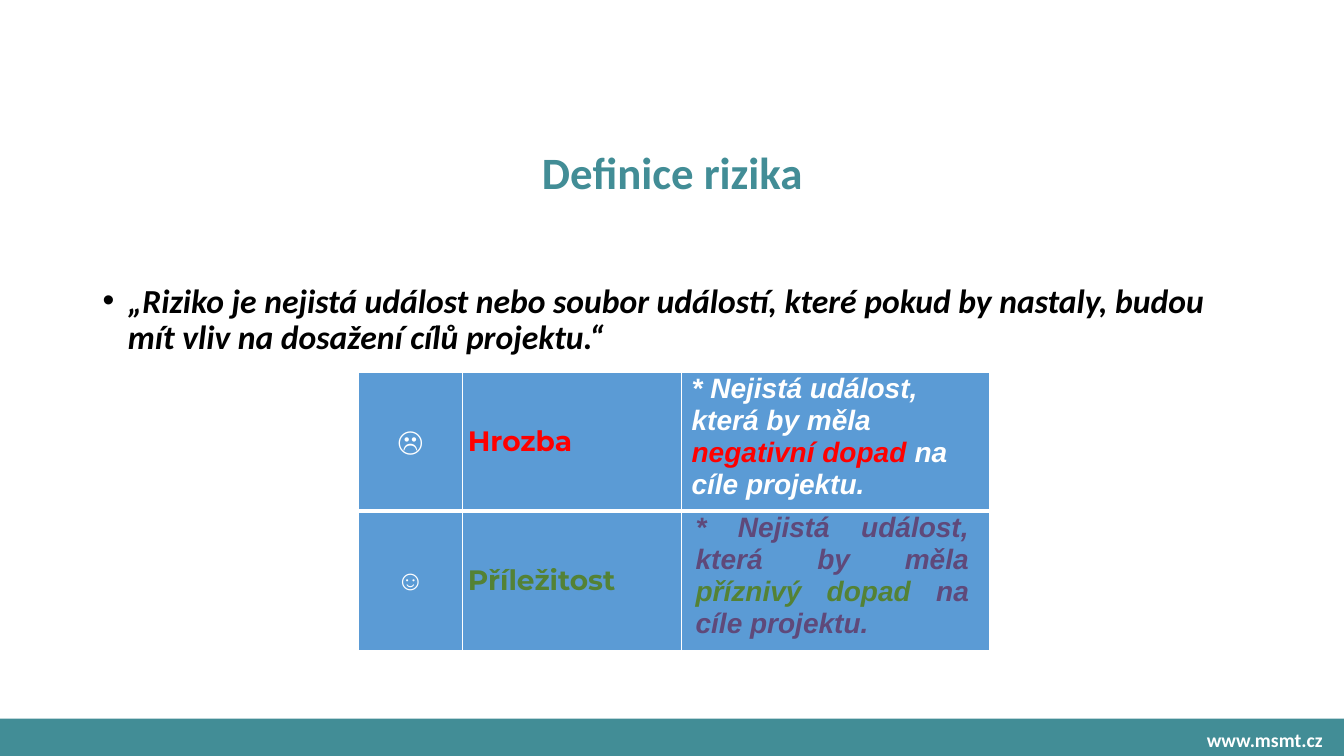
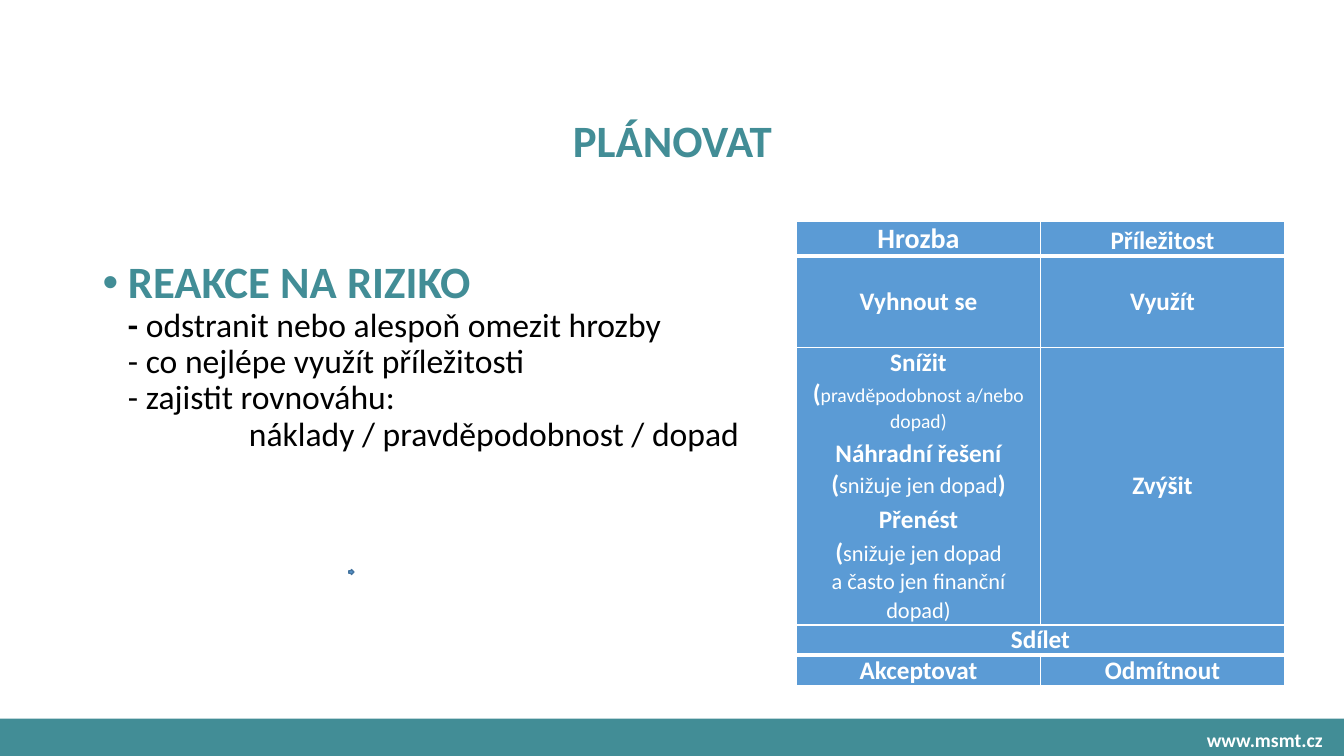
from typing import NamedTuple

from lxml import etree
from pptx import Presentation
from pptx.dml.color import RGBColor
from pptx.enum.shapes import MSO_SHAPE
from pptx.enum.text import MSO_ANCHOR, PP_ALIGN
from pptx.oxml.ns import qn
from pptx.util import Inches, Pt

TEAL = RGBColor(0x42, 0x8D, 0x96)
BLUE = RGBColor(0x5B, 0x9B, 0xD5)
DARK_BLUE = RGBColor(0x43, 0x73, 0x9E)
WHITE = RGBColor(0xFF, 0xFF, 0xFF)
BLACK = RGBColor(0x00, 0x00, 0x00)
RED = RGBColor(0xFF, 0x00, 0x00)
GREEN = RGBColor(0x54, 0x82, 0x35)
PURPLE = RGBColor(0x5F, 0x49, 0x7A)

CALIBRI, ARIAL, MONTSERRAT = "Calibri", "Arial", "Montserrat"
LEFT, CENTER, RIGHT = PP_ALIGN.LEFT, PP_ALIGN.CENTER, PP_ALIGN.RIGHT
JUSTIFY = PP_ALIGN.JUSTIFY
TOP, MIDDLE, BOTTOM = MSO_ANCHOR.TOP, MSO_ANCHOR.MIDDLE, MSO_ANCHOR.BOTTOM
RECTANGLE, RIGHT_ARROW = MSO_SHAPE.RECTANGLE, MSO_SHAPE.RIGHT_ARROW

SLIDE_WIDTH, SLIDE_HEIGHT = 13.33, 7.5
FOOTER_HEIGHT = 0.37
CONTENT_LEFT, CONTENT_WIDTH = 0.92, 11.5
BULLET_INDENT = 0.25
THIN_BORDER, THICK_BORDER = 1, 3


class TextRun(NamedTuple):
    text: str
    size: float = 18
    color: RGBColor = WHITE
    bold: bool = True
    italic: bool = False
    font: str = CALIBRI


class TextLine(NamedTuple):
    """One paragraph; indents are in inches, space before in points."""
    runs: tuple[TextRun, ...]
    align: PP_ALIGN = CENTER
    before: float = 0
    spacing: float = 1.0
    left: float = 0
    right: float = 0
    bullet: bool = False


class CellText(NamedTuple):
    """Content of one table cell; side margins are in inches."""
    lines: tuple[TextLine, ...]
    anchor: MSO_ANCHOR = MIDDLE
    left: float = 0
    right: float = 0


class TableLayout(NamedTuple):
    """Place of a table; rows in thick_after end with a thick border."""
    left: float
    top: float
    columns: tuple[float, ...]
    rows: tuple[float, ...]
    thick_after: tuple[int, ...]


def add_run(paragraph, text: str, *, size: float, color: RGBColor,
            bold: bool, italic: bool, font: str) -> None:
    run = paragraph.add_run()
    run.text = text
    run.font.size = Pt(size)
    run.font.color.rgb = color
    run.font.bold = bold
    run.font.italic = italic
    run.font.name = font


def write_lines(frame, lines: tuple[TextLine, ...]) -> None:
    frame.word_wrap = True
    for index, line in enumerate(lines):
        paragraph = frame.add_paragraph() if index else frame.paragraphs[0]
        paragraph.alignment = line.align
        paragraph.line_spacing = line.spacing
        paragraph.space_before = Pt(line.before)
        properties = paragraph._p.get_or_add_pPr()
        properties.set("marL", str(Inches(line.left)))
        properties.set("marR", str(Inches(line.right)))
        if line.bullet:
            properties.set("indent", str(-Inches(BULLET_INDENT)))
            etree.SubElement(properties, qn("a:buFont"), typeface=ARIAL)
            etree.SubElement(properties, qn("a:buChar"), char="•")
        for run in line.runs:
            add_run(paragraph, **run._asdict())


def add_text(slide, lines: tuple[TextLine, ...], left: float, top: float,
             width: float, height: float, anchor: MSO_ANCHOR = TOP) -> None:
    box = slide.shapes.add_textbox(
        Inches(left), Inches(top), Inches(width), Inches(height))
    box.text_frame.vertical_anchor = anchor
    write_lines(box.text_frame, lines)


def add_shape(slide, kind: MSO_SHAPE, fill: RGBColor, left: float, top: float,
              width: float, height: float):
    shape = slide.shapes.add_shape(
        kind, Inches(left), Inches(top), Inches(width), Inches(height))
    shape.shadow.inherit = False
    shape.fill.solid()
    shape.fill.fore_color.rgb = fill
    shape.line.fill.background()
    return shape


def set_borders(cell, top: float, bottom: float) -> None:
    properties = cell._tc.get_or_add_tcPr()
    widths = {"lnL": THIN_BORDER, "lnR": THIN_BORDER, "lnT": top, "lnB": bottom}
    for tag, width in widths.items():
        border = etree.SubElement(properties, qn(f"a:{tag}"), w=str(Pt(width)))
        fill = etree.SubElement(border, qn("a:solidFill"))
        etree.SubElement(fill, qn("a:srgbClr"), val=str(WHITE))


def add_table(slide, layout: TableLayout,
              content: tuple[tuple[CellText, ...], ...]) -> None:
    """Draw the table; a row with a single cell spans all columns."""
    table = slide.shapes.add_table(
        len(layout.rows), len(layout.columns),
        Inches(layout.left), Inches(layout.top),
        Inches(sum(layout.columns)), Inches(sum(layout.rows))).table
    for column, width in zip(table.columns, layout.columns):
        column.width = Inches(width)
    for row, height in zip(table.rows, layout.rows):
        row.height = Inches(height)

    def border_after(row_index: int) -> int:
        return THICK_BORDER if row_index in layout.thick_after else THIN_BORDER

    last_column = len(layout.columns) - 1
    for row_index, row_content in enumerate(content):
        if len(row_content) == 1:
            table.cell(row_index, 0).merge(table.cell(row_index, last_column))
        for cell in table.rows[row_index].cells:
            set_borders(cell, border_after(row_index - 1), border_after(row_index))
            cell.fill.solid()
            cell.fill.fore_color.rgb = BLUE
        for column_index, text in enumerate(row_content):
            cell = table.cell(row_index, column_index)
            cell.margin_top = cell.margin_bottom = 0
            cell.margin_left = Inches(text.left)
            cell.margin_right = Inches(text.right)
            cell.vertical_anchor = text.anchor
            write_lines(cell.text_frame, text.lines)


def add_base_slide(presentation, title: str, title_top: float,
                   title_height: float):
    """Add a blank slide with the footer band and the title."""
    slide = presentation.slides.add_slide(presentation.slide_layouts[6])
    band = add_shape(slide, RECTANGLE, TEAL, 0, SLIDE_HEIGHT - FOOTER_HEIGHT,
                     SLIDE_WIDTH, FOOTER_HEIGHT)
    frame = band.text_frame
    frame.margin_right = Inches(0.21)
    frame.margin_bottom = 0
    frame.vertical_anchor = MIDDLE
    write_lines(frame, (TextLine((TextRun("www.msmt.cz", 14),), RIGHT),))
    heading = TextLine((TextRun(title, 32, TEAL),), spacing=0.9)
    add_text(slide, (heading,), CONTENT_LEFT, title_top, CONTENT_WIDTH,
             title_height, MIDDLE)
    return slide


def symbol_cell(symbol: str) -> CellText:
    return CellText((TextLine((TextRun(symbol, 20, font=ARIAL),)),))


def term_cell(term: str, color: RGBColor) -> CellText:
    run = TextRun(term, 20, color, font=MONTSERRAT)
    return CellText((TextLine((run,), LEFT),), left=0.05)


def impact_cell(impact: str, color: RGBColor, impact_color: RGBColor,
                align: PP_ALIGN, left: float) -> CellText:
    parts = (("* Nejistá událost, která by měla ", color),
             (impact, impact_color), (" na cíle projektu.", color))
    runs = tuple(TextRun(text, 20, part_color, italic=True, font=ARIAL)
                 for text, part_color in parts)
    return CellText((TextLine(runs, align, spacing=1.03),), TOP, left, 0.21)


def label_cell(label: str, size: float = 18,
               anchor: MSO_ANCHOR = MIDDLE) -> CellText:
    return CellText((TextLine((TextRun(label, size),)),), anchor)


def build_definition_slide(presentation) -> None:
    slide = add_base_slide(presentation, "Definice rizika", 1.26, 0.95)
    definition = TextRun(
        "„Riziko je nejistá událost nebo soubor událostí, které pokud by "
        "nastaly, budou mít vliv na dosažení cílů projektu.“",
        24, BLACK, italic=True)
    add_text(slide, (TextLine((definition,), LEFT, spacing=0.9,
                              left=BULLET_INDENT, bullet=True),),
             CONTENT_LEFT, 2.77, CONTENT_WIDTH, 0.9)
    add_table(
        slide,
        TableLayout(3.55, 3.69, (1.04, 2.17, 3.06), (1.38, 1.38), (0,)),
        ((symbol_cell("☹"), term_cell("Hrozba", RED),
          impact_cell("negativní dopad", WHITE, RED, LEFT, 0.1)),
         (symbol_cell("☺"), term_cell("Příležitost", GREEN),
          impact_cell("příznivý dopad", PURPLE, GREEN, JUSTIFY, 0.14))))


def build_planning_slide(presentation) -> None:
    slide = add_base_slide(presentation, "PLÁNOVAT", 1.08, 0.68)

    def body_line(*runs: TextRun, left: float = BULLET_INDENT,
                  bullet: bool = False) -> TextLine:
        return TextLine(runs, LEFT, spacing=0.9, left=left, bullet=bullet)

    def plain(text: str) -> TextRun:
        return TextRun(text, 24, BLACK, bold=False)

    add_text(slide, (
        body_line(TextRun("REAKCE NA RIZIKO", 32, TEAL), bullet=True),
        body_line(TextRun("- ", 24, BLACK),
                  plain("odstranit nebo alespoň omezit hrozby")),
        body_line(plain("- co nejlépe využít příležitosti")),
        body_line(plain("- zajistit rovnováhu:")),
        body_line(plain("náklady / pravděpodobnost / dopad"), left=1.45),
    ), CONTENT_LEFT, 2.53, 6.88, 2.1)

    arrow = add_shape(slide, RIGHT_ARROW, BLUE, 3.46, 5.65, 0.05, 0.05)
    arrow.line.color.rgb = DARK_BLUE
    arrow.line.width = Pt(1)

    bracket = TextRun("(")
    reduction = CellText((
        TextLine((TextRun("Snížit"),)),
        TextLine((bracket, TextRun("pravděpodobnost a/nebo dopad)", 14,
                                   bold=False)), before=0.3),
        TextLine((TextRun("Náhradní řešení"),), before=3.3),
        TextLine((bracket, TextRun("snižuje jen dopad", 16, bold=False),
                  TextRun(")")), before=0.3),
        TextLine((TextRun("Přenést"),), before=3.4),
        TextLine((bracket, TextRun("snižuje jen dopad a často jen finanční dopad)",
                                   16, bold=False)),
                 before=0.4, spacing=1.03, left=0.17, right=0.17),
    ), TOP, 0.15, 0.15)
    add_table(
        slide,
        TableLayout(7.9, 2.2, (2.42, 2.42), (0.34, 0.91, 2.75, 0.3, 0.3), (0, 3)),
        ((label_cell("Hrozba", 20, BOTTOM), label_cell("Příležitost", anchor=BOTTOM)),
         (label_cell("Vyhnout se"), label_cell("Využít")),
         (reduction, label_cell("Zvýšit")),
         (label_cell("Sdílet"),),
         (label_cell("Akceptovat"), label_cell("Odmítnout"))))


def main() -> None:
    presentation = Presentation()
    presentation.slide_width = Inches(SLIDE_WIDTH)
    presentation.slide_height = Inches(SLIDE_HEIGHT)
    build_definition_slide(presentation)
    build_planning_slide(presentation)
    presentation.save("out.pptx")


if __name__ == "__main__":
    main()
